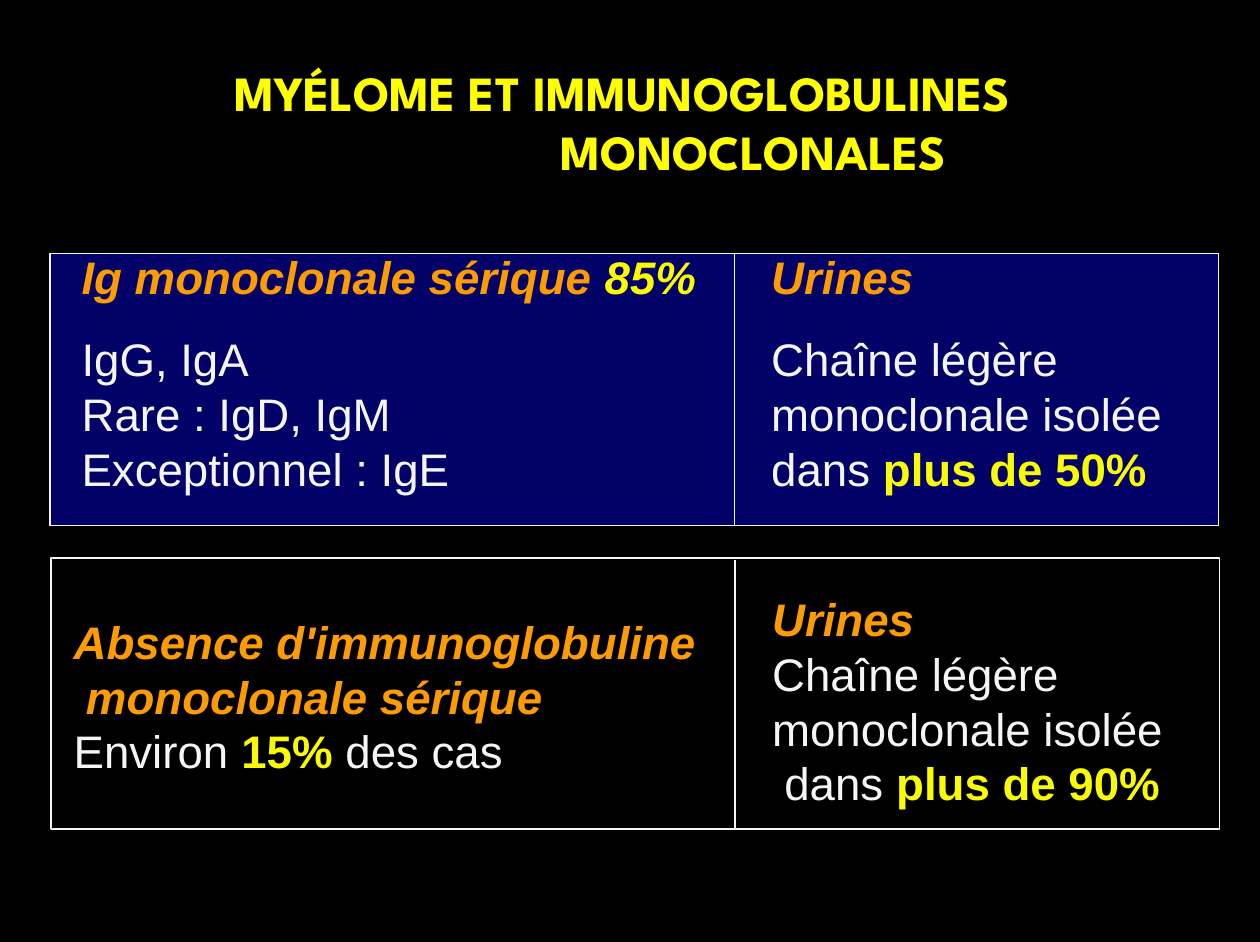
import dataclasses

import pptx
import pptx.dml.color
import pptx.enum.shapes
import pptx.enum.text
import pptx.oxml
import pptx.oxml.ns
import pptx.util

EMU_PER_PX = 6350


@dataclasses.dataclass(frozen=True)
class Theme:
    background: str = "000000"
    panel: str = "010168"
    line: str = "F5F5F5"
    text: str = "F5F5F5"
    title: str = "FFFF00"
    heading: str = "FD9B03"
    accent: str = "F9FC00"
    title_font: str = "League Spartan"
    body_font: str = "Arial"
    title_size: int = 28
    body_size: int = 26
    line_width: int = 1


THEME = Theme()
HEADING = dict(color=THEME.heading, bold=True, italic=True)
HEADING_ACCENT = dict(color=THEME.accent, bold=True, italic=True)
ACCENT = dict(color=THEME.accent, bold=True)
PLAIN = dict(color=THEME.text)


def px(length):
    return pptx.util.Emu(length * EMU_PER_PX)


def rgb(color):
    return pptx.dml.color.RGBColor.from_string(color)


def add_span(para, text, color, bold=False, italic=False,
             font=THEME.body_font, size=THEME.body_size):
    span = para.add_run()
    span.text = text
    span.font.name = font
    span.font.size = pptx.util.Pt(size)
    span.font.bold = bold
    span.font.italic = italic
    span.font.color.rgb = rgb(color)


def set_indent(para, left, first=0):
    properties = para._p.get_or_add_pPr()
    properties.set("marL", str(px(left)))
    properties.set("indent", str(px(first)))


def clear_insets(frame):
    frame.margin_left = frame.margin_right = 0
    frame.margin_top = frame.margin_bottom = 0
    frame.word_wrap = True


def format_title(title):
    title.left, title.top, title.width, title.height = map(px, (179, 71, 1057, 135))
    frame = title.text_frame
    clear_insets(frame)
    frame.auto_size = pptx.enum.text.MSO_AUTO_SIZE.NONE
    frame.vertical_anchor = pptx.enum.text.MSO_ANCHOR.MIDDLE
    para = frame.paragraphs[0]
    para.alignment = pptx.enum.text.PP_ALIGN.CENTER
    set_indent(para, 302, -299)
    add_span(para, "MYÉLOME ET IMMUNOGLOBULINES MONOCLONALES", THEME.title,
             bold=True, font=THEME.title_font, size=THEME.title_size)


def add_text(page, left, top, width, height, lines):
    box = page.shapes.add_textbox(*map(px, (left, top, width, height)))
    frame = box.text_frame
    clear_insets(frame)
    for index, (indent, spans) in enumerate(lines):
        para = frame.add_paragraph() if index else frame.paragraphs[0]
        set_indent(para, indent)
        for text, style in spans:
            add_span(para, text, **style)


def set_border(cell, side, visible):
    namespace = pptx.oxml.ns.nsdecls("a")
    width = pptx.util.Pt(THEME.line_width)
    paint = "<a:noFill/>"
    if visible:
        paint = f'<a:solidFill><a:srgbClr val="{THEME.line}"/></a:solidFill>'
    border = pptx.oxml.parse_xml(
        f'<a:ln{side} {namespace} w="{width}">{paint}</a:ln{side}>')
    cell._tc.get_or_add_tcPr().append(border)


def add_serum_table(page, left, top, widths, heights, rows):
    table = page.shapes.add_table(
        len(heights), len(widths),
        *map(px, (left, top, sum(widths), sum(heights)))).table
    table.first_row = table.horz_banding = False
    for column, width in zip(table.columns, widths):
        column.width = px(width)
    for row, height in zip(table.rows, heights):
        row.height = px(height)
    last = len(rows) - 1
    for row_index, row in enumerate(rows):
        for column_index, spans in enumerate(row):
            cell = table.cell(row_index, column_index)
            cell.margin_left = px((36, 42)[column_index])
            cell.margin_right = cell.margin_top = cell.margin_bottom = 0
            edges = dict(L=True, R=True, T=row_index == 0, B=row_index == last)
            for side, visible in edges.items():
                set_border(cell, side, visible)
            cell.fill.solid()
            cell.fill.fore_color.rgb = rgb(THEME.panel)
            para = cell.text_frame.paragraphs[0]
            if row_index == 0:
                para.space_before = pptx.util.Pt(12.3)
            else:
                para.line_spacing = pptx.util.Pt(28.9)
            for text, style in spans:
                add_span(para, text, **style)


def format_line(line):
    line.color.rgb = rgb(THEME.line)
    line.width = pptx.util.Pt(THEME.line_width)


def add_divider(page, x, top, bottom):
    divider = page.shapes.add_connector(
        pptx.enum.shapes.MSO_CONNECTOR.STRAIGHT, *map(px, (x, top, x, bottom)))
    format_line(divider.line)
    divider._element.spPr.append(
        pptx.oxml.parse_xml(f'<a:effectLst {pptx.oxml.ns.nsdecls("a")}/>'))


def add_frame(page, left, top, width, height):
    frame = page.shapes.add_shape(
        pptx.enum.shapes.MSO_SHAPE.RECTANGLE, *map(px, (left, top, width, height)))
    frame.shadow.inherit = False
    frame.fill.background()
    format_line(frame.line)


def main():
    deck = pptx.Presentation()
    deck.slide_width, deck.slide_height = px(1436), px(1074)
    page = deck.slides.add_slide(deck.slide_layouts[5])
    page.background.fill.solid()
    page.background.fill.fore_color.rgb = rgb(THEME.background)
    format_title(page.shapes.title)

    add_text(page, 82, 700, 713, 189, [
        (2, [("Absence d'immunoglobuline", HEADING)]),
        (16, [("monoclonale sérique", HEADING)]),
        (2, [("Environ ", PLAIN), ("15%", ACCENT), (" des cas", PLAIN)]),
    ])
    add_text(page, 878, 674, 449, 252, [
        (2, [("Urines", HEADING)]),
        (2, [("Chaîne légère", PLAIN)]),
        (2, [("monoclonale isolée", PLAIN)]),
        (16, [("dans ", PLAIN), ("plus de 90%", ACCENT)]),
    ])
    add_serum_table(page, 57, 289, (780, 552), (93, 63, 63, 91), [
        ([("Ig monoclonale sérique ", HEADING), ("85%", HEADING_ACCENT)],
         [("Urines", HEADING)]),
        ([("IgG, IgA", PLAIN)], [("Chaîne légère", PLAIN)]),
        ([("Rare : IgD, IgM", PLAIN)], [("monoclonale isolée", PLAIN)]),
        ([("Exceptionnel : IgE", PLAIN)],
         [("dans ", PLAIN), ("plus de 50%", ACCENT)]),
    ])
    add_divider(page, 838, 639, 945)
    add_frame(page, 58, 636, 1332, 309)
    deck.save("out.pptx")


if __name__ == "__main__":
    main()
